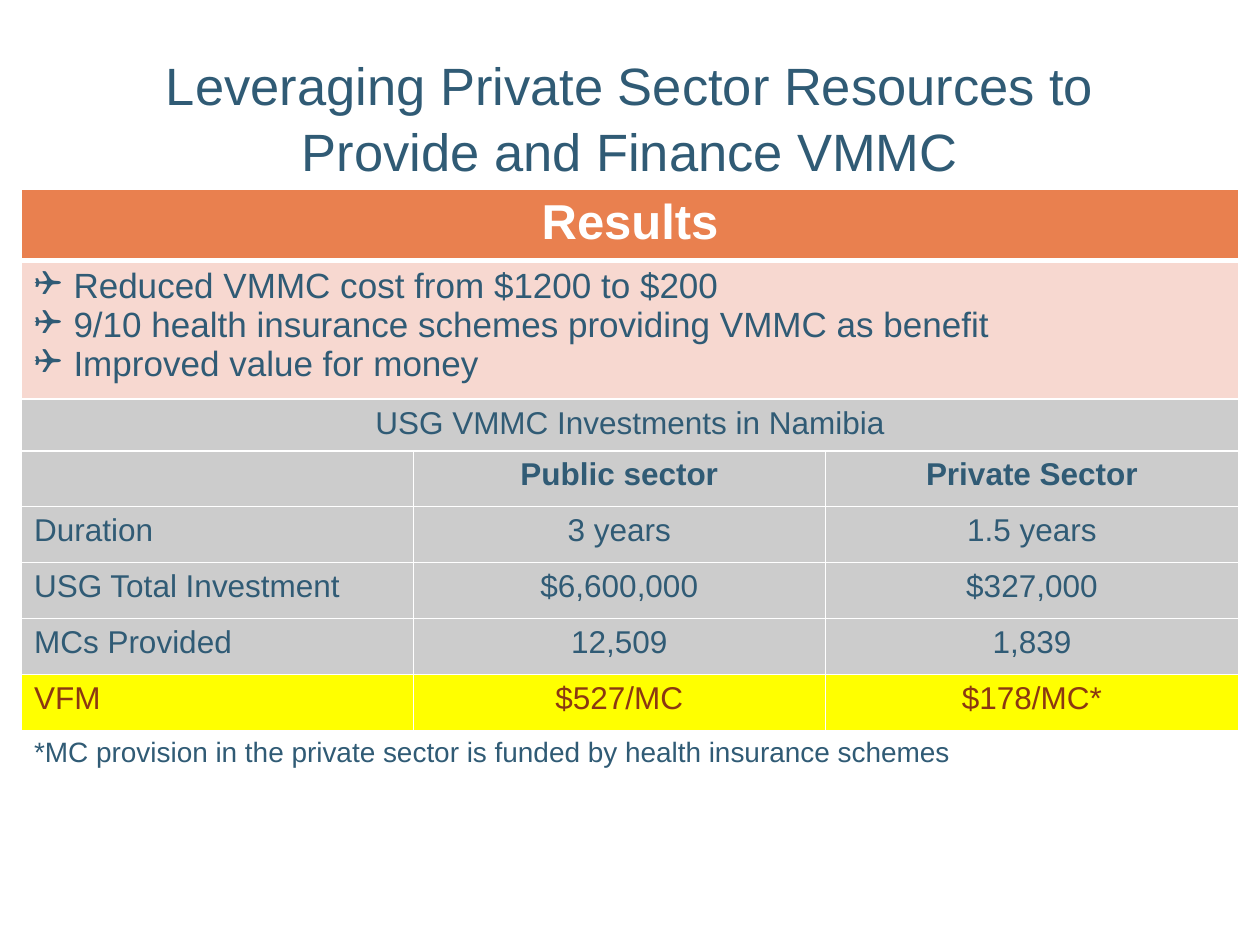
from lxml import etree
from pptx import Presentation
from pptx.dml.color import RGBColor
from pptx.enum import text
from pptx.oxml import ns
from pptx.util import Pt

COLORS = {"ink": "305B75", "white": "FFFFFF", "orange": "E9804F", "pink": "F7D8D0",
          "grey": "CCCCCC", "yellow": "FFFF00", "brown": "8B3811"}
LEFT, CENTER = text.PP_ALIGN.LEFT, text.PP_ALIGN.CENTER
BODY = {"size": Pt(18), "bold": False, "color": "ink"}
HEADING = {**BODY, "bold": True}
VALUE = {**BODY, "color": "brown"}
COLUMNS = [223.9, 235.4, 236.2]

ROWS = [
    (38.9, "orange", {"size": Pt(28), "bold": True, "color": "white"}, ["Results"]),
    (74.9, "pink", {**BODY, "size": Pt(20)}, [
        "Reduced VMMC cost from $1200 to $200\n"
        "9/10 health insurance schemes providing VMMC as benefit\n"
        "Improved value for money"]),
    (29.5, "grey", BODY, ["USG VMMC Investments in Namibia"]),
    (32, "grey", HEADING, ["", "Public sector", "Private Sector"]),
    (32, "grey", BODY, ["Duration", "3 years", "1.5 years"]),
    (32, "grey", BODY, ["USG Total Investment", "$6,600,000", "$327,000"]),
    (32, "grey", BODY, ["MCs Provided", "12,509", "1,839"]),
    (32, "yellow", VALUE, ["VFM", "$527/MC", "$178/MC*"]),
    (32, None, {**BODY, "size": Pt(16)}, [
        "*MC provision in the private sector is funded by health insurance schemes"]),
]
CENTERED_SPANS = (0, 2)
BULLET_ROW = 1


def add_text(paragraph, words, style, align):
    """Write one styled run into a paragraph."""
    paragraph.alignment = align
    run = paragraph.add_run()
    run.text = words
    run.font.name = "Arial"
    for key, value in style.items():
        if key == "color":
            run.font.color.rgb = RGBColor.from_string(COLORS[value])
        else:
            setattr(run.font, key, value)


def add_bullet(paragraph):
    """Give a paragraph a hanging box bullet."""
    properties = paragraph._p.get_or_add_pPr()
    properties.set("marL", str(Pt(22.5)))
    properties.set("indent", str(Pt(-22.5)))
    etree.SubElement(properties, ns.qn("a:buFont"), typeface="Wingdings")
    etree.SubElement(properties, ns.qn("a:buChar"), char="❑")


def add_borders(cell, bottom, top):
    """Draw white lines round a cell."""
    properties = cell._tc.get_or_add_tcPr()
    for side, width in (("L", 1), ("R", 1), ("T", top), ("B", bottom)):
        line = etree.SubElement(properties, ns.qn(f"a:ln{side}"), w=str(Pt(width)))
        fill = etree.SubElement(line, ns.qn("a:solidFill"))
        etree.SubElement(fill, ns.qn("a:srgbClr"), val=COLORS["white"])


def fill_cell(cell, fill):
    """Fill a cell with a named colour, or leave it clear."""
    if fill is None:
        cell.fill.background()
    else:
        cell.fill.solid()
        cell.fill.fore_color.rgb = RGBColor.from_string(COLORS[fill])


def add_title(slide, left, top, width, height):
    """Place the slide heading in the given box."""
    frame = slide.shapes.add_textbox(Pt(left), Pt(top), Pt(width), Pt(height)).text_frame
    frame.word_wrap = True
    frame.vertical_anchor = text.MSO_ANCHOR.MIDDLE
    heading = frame.paragraphs[0]
    heading.line_spacing = 1.05
    add_text(heading, "Leveraging Private Sector Resources to Provide and Finance VMMC",
             {"size": Pt(30), "color": "ink"}, CENTER)


def add_results(slide, left, top):
    """Place the results table with its corner at the given point."""
    heights = [row[0] for row in ROWS]
    results = slide.shapes.add_table(len(ROWS), len(COLUMNS), Pt(left), Pt(top),
                                     Pt(sum(COLUMNS)), Pt(sum(heights))).table
    for column, width in zip(results.columns, COLUMNS):
        column.width = Pt(width)
    for index, (height, fill, style, entries) in enumerate(ROWS):
        results.rows[index].height = Pt(height)
        for position in range(len(COLUMNS)):
            cell = results.cell(index, position)
            add_borders(cell, 3 if index == 0 else 1, 3 if index == 1 else 1)
            fill_cell(cell, fill)
        if len(entries) == 1:
            results.cell(index, 0).merge(results.cell(index, len(COLUMNS) - 1))
        for position, entry in enumerate(entries):
            frame = results.cell(index, position).text_frame
            align = CENTER if position or index in CENTERED_SPANS else LEFT
            for number, words in enumerate(entry.split("\n") if entry else []):
                paragraph = frame.add_paragraph() if number else frame.paragraphs[0]
                if index == BULLET_ROW:
                    add_bullet(paragraph)
                add_text(paragraph, words, style, align)


def main():
    """Build the slide and save it."""
    deck = Presentation()
    deck.slide_width, deck.slide_height = Pt(720), Pt(540)
    slide = deck.slides.add_slide(deck.slide_layouts[6])
    add_title(slide, 36, 30.2, 648, 72)
    add_results(slide, 12.3, 108)
    deck.save("out.pptx")


if __name__ == "__main__":
    main()
